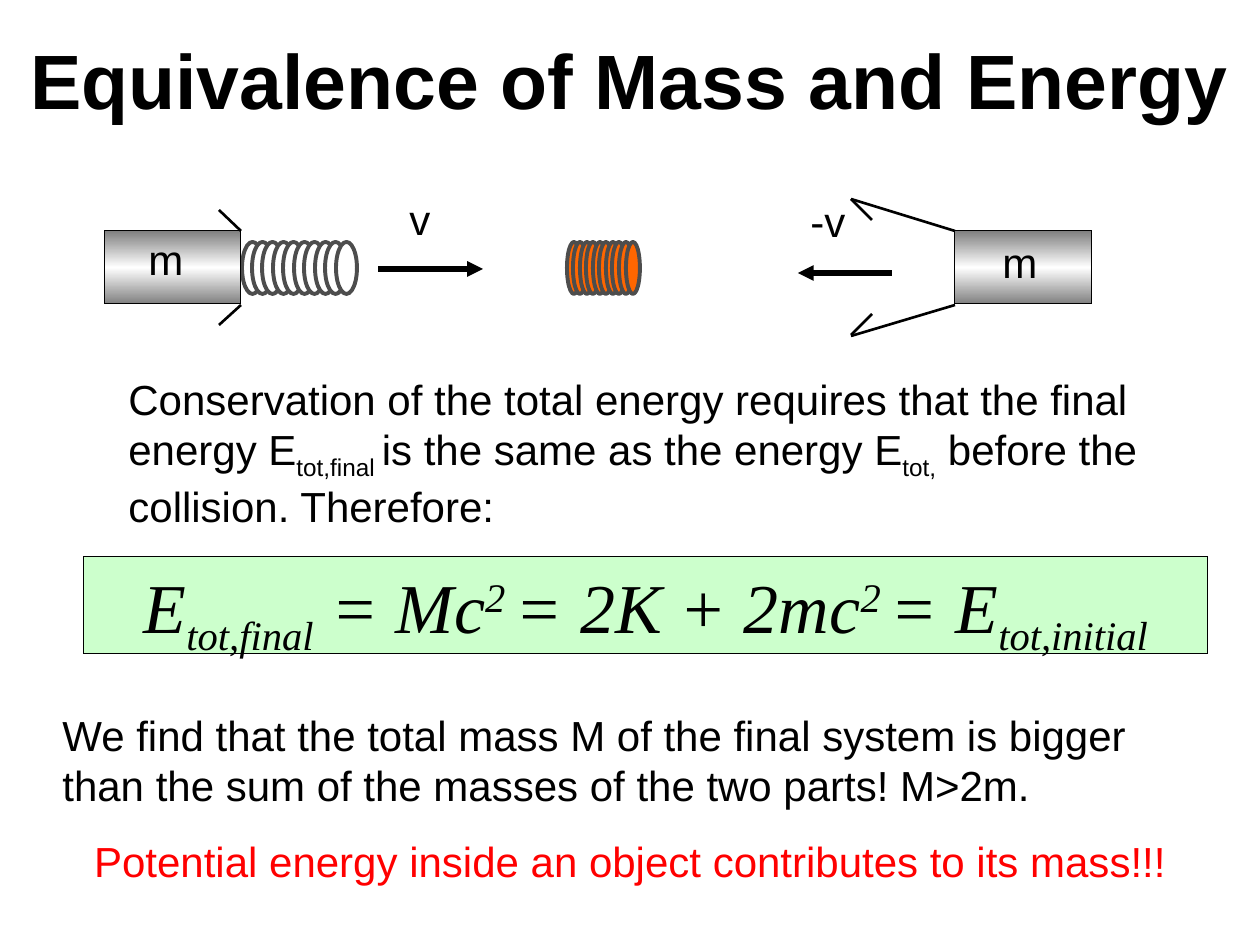
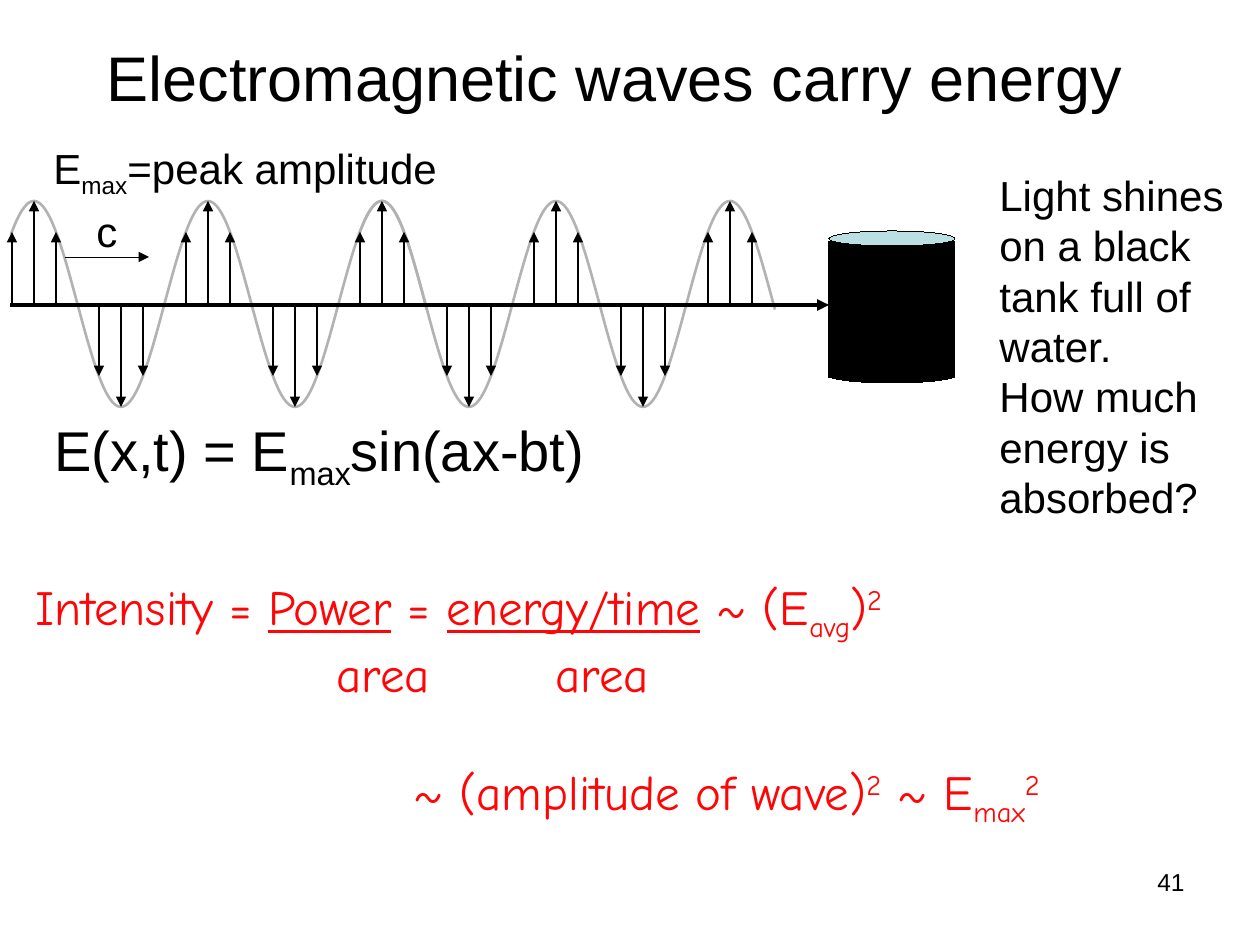
from copy import deepcopy
from math import cos, pi, sin

from lxml.etree import SubElement
from pptx import Presentation
from pptx.dml.color import RGBColor
from pptx.enum.shapes import MSO_CONNECTOR, MSO_SHAPE
from pptx.enum.text import MSO_ANCHOR, MSO_AUTO_SIZE, PP_ALIGN
from pptx.oxml.ns import qn
from pptx.util import Emu, Pt

SCALE = 914400 / 126  # EMU per px
BLACK = RGBColor(0x00, 0x00, 0x00)
WHITE = RGBColor(0xFF, 0xFF, 0xFF)
STEEL = RGBColor(0x80, 0x80, 0x80)
COIL_GRAY = RGBColor(0x4D, 0x4D, 0x4D)
HOT = RGBColor(0xFF, 0x66, 0x00)
PALE_GREEN = RGBColor(0xCC, 0xFF, 0xCC)
WAVE_GRAY = RGBColor(0xB2, 0xB2, 0xB2)
WATER = RGBColor(0xBB, 0xE0, 0xE3)
RED = RGBColor(0xFF, 0x00, 0x00)
INK_RED = RGBColor(0xFF, 0x05, 0x05)
SANS, SERIF, HAND = "Arial", "Times New Roman", "Comic Neue"
SUB, SUP, UNDERLINE = "sub", "sup", "underline"
BASELINE = {SUB: "-25000", SUP: "30000"}

# Mass and energy: a paragraph is a list of runs, a run is text or (text, style)
MASS_TITLE = "Equivalence of Mass and Energy"
CONSERVATION = [["Conservation of the total energy requires that the final energy E",
                 ("tot,final ", SUB), "is the same as the energy E", ("tot,", SUB),
                 " before the collision. Therefore:"]]
EQUATION = [["E", ("tot,final", SUB), " = Mc", ("2 ", SUP), "= 2K + 2mc", ("2 ", SUP),
             "= E", ("tot,initial", SUB)]]
FINDING = [["We find that the total mass M of the final system is bigger than "
            "the sum of the masses of the two parts! M>2m."]]
CONCLUSION = [["Potential energy inside an object contributes to its mass!!!"]]
LEFT_PART = {
    "block": (105, 231, 136, 73), "label": (136, 227, 67, 72),
    "hooks": [(219, 325, 241, 305), (219, 210, 241, 231)],
}
RIGHT_PART = {
    "block": (955, 231, 137, 73), "label": (990, 230, 67, 72),
    "hooks": [(955, 231, 851, 199), (851, 199, 872, 220),
              (955, 305, 851, 336), (851, 335, 872, 314)],
}
VELOCITIES = [("v", (397, 187, 50, 72), (378, 269, 483, 269)),
              ("-v", (798, 189, 67, 72), (892, 273, 798, 273))]
COILS = 10

# Waves
WAVE_TITLE = "Electromagnetic waves carry energy"
PEAK_LABEL = [["E", ("max", SUB), "=peak amplitude"]]
FIELD = [["E(x,t) = E", ("max", SUB), "sin(ax-bt)"]]
QUESTION = [["Light shines on a black tank full of water."], ["How much energy is absorbed?"]]
INTENSITY = [
    ["Intensity = ", ("Power", UNDERLINE), " = ", ("energy/time", UNDERLINE), " ~ (E",
     ("avg", SUB), ")", ("2", SUP)],
    ["\tarea\tarea"],
    ["\t~ (amplitude of wave)", ("2", SUP), " ~ E", ("max", SUB), ("2", SUP)],
]
INTENSITY_TABS = [[], [301, 520], [378]]
AXIS_Y, WAVE_MIDDLE, AMPLITUDE, PERIOD, FIRST_PEAK = 305, 304, 103, 174, 34
TRAIN_STARTS, TRAIN_LENGTH, TRAIN_PIECES = (11, 11 + 2 * PERIOD), 416, 20
EXTREMA, FIELD_GAP = 9, 22


def px(n):
    return Emu(round(n * SCALE))


def box_px(box):
    return [px(n) for n in box]


def drop_style(sp):
    """Remove the theme style, and with it the shadow and the default colours."""
    sp._element.remove(sp._element.find(qn("p:style")))


def add_runs(p, runs, size, font, color, bold=False, italic=False):
    for run in runs:
        text, style = run if isinstance(run, tuple) else (run, None)
        r = p.add_run()
        r.text = text
        f = r.font
        f.size, f.name, f.bold, f.italic = Pt(size), font, bold, italic
        f.color.rgb = color
        if style == UNDERLINE:
            f.underline = True
        elif style:
            f._element.set("baseline", BASELINE[style])


def fill_text(sp, paragraphs, size=24, font=SANS, color=BLACK, align=PP_ALIGN.LEFT,
              wrap=True, italic=False):
    tf = sp.text_frame
    tf.word_wrap = wrap
    tf.vertical_anchor = MSO_ANCHOR.TOP
    for i, runs in enumerate(paragraphs):
        p = tf.add_paragraph() if i else tf.paragraphs[0]
        p.alignment = align
        add_runs(p, runs, size, font, color, italic=italic)


def add_text(s, box, paragraphs, **look):
    sp = s.shapes.add_textbox(*box_px(box))
    fill_text(sp, paragraphs, **look)
    return sp


def add_shape(s, kind, box, fill, line=BLACK, width=None):
    sp = s.shapes.add_shape(kind, *box_px(box))
    drop_style(sp)
    sp.fill.solid()
    sp.fill.fore_color.rgb = fill
    if line is None:
        sp.line.fill.background()
    else:
        sp.line.color.rgb = line
    if width:
        sp.line.width = Pt(width)
    return sp


def add_line(s, ends, width=1.5, arrow=False):
    c = s.shapes.add_connector(MSO_CONNECTOR.STRAIGHT, *box_px(ends))
    drop_style(c)
    c.line.color.rgb = BLACK
    if width:
        c.line.width = Pt(width)
    if arrow:
        SubElement(c.line._get_or_add_ln(), qn("a:tailEnd"), type="triangle")
    SubElement(c._element.spPr, qn("a:effectLst"))


def add_slide(prs, title, box, size, bold=False):
    s = prs.slides.add_slide(prs.slide_layouts[5])
    sp = s.shapes.title
    sp.left, sp.top, sp.width, sp.height = box_px(box)
    tf = sp.text_frame
    tf.auto_size = MSO_AUTO_SIZE.NONE
    tf.vertical_anchor = MSO_ANCHOR.MIDDLE
    p = tf.paragraphs[0]
    p.alignment = PP_ALIGN.CENTER
    add_runs(p, [title], size, SANS, BLACK, bold)
    return s


def add_part(s, part):
    """Metal block, bright across its middle, with its hooks and label."""
    sp = add_shape(s, MSO_SHAPE.RECTANGLE, part["block"], WHITE)
    sp.fill.gradient()
    sp.fill.gradient_angle = 90
    edge, middle = sp.fill.gradient_stops
    edge.color.rgb, edge.position = STEEL, 0
    middle.color.rgb, middle.position = WHITE, 0.5
    stops = sp._element.spPr.find(".//" + qn("a:gsLst"))
    last = deepcopy(stops[0])
    last.set("pos", "100000")
    stops.append(last)
    for ends in part["hooks"]:
        add_line(s, ends)
    add_text(s, part["label"], [["m"]], wrap=False)


def add_spring(s, left, length, coil_width, fill):
    for i in range(COILS):
        x = left + (length - coil_width) * i // (COILS - 1)
        add_shape(s, MSO_SHAPE.OVAL, (x, 242, coil_width, 52), fill, COIL_GRAY, 2.25)


def wave_y(x):
    return WAVE_MIDDLE - AMPLITUDE * cos(2 * pi * (x - FIRST_PEAK) / PERIOD)


def wave_slope(x):
    return AMPLITUDE * 2 * pi / PERIOD * sin(2 * pi * (x - FIRST_PEAK) / PERIOD)


def add_wave(s, start):
    """Outline through points of the wave, its pieces bent to the wave's slope."""
    step = TRAIN_LENGTH / TRAIN_PIECES
    xs = [start + i * step for i in range(TRAIN_PIECES + 1)]
    points = [(px(x), px(wave_y(x))) for x in xs]
    fb = s.shapes.build_freeform(*points[0])
    fb.add_line_segments(points[1:], close=False)
    sp = fb.convert_to_shape()
    drop_style(sp)
    sp.fill.background()
    sp.line.color.rgb = WAVE_GRAY
    sp.line.width = Pt(1.5)
    third = step / 3
    for piece, x0, x1 in zip(list(sp._element.iter(qn("a:lnTo"))), xs, xs[1:]):
        piece.tag = qn("a:cubicBezTo")
        controls = [(x0 + third, wave_y(x0) + third * wave_slope(x0)),
                    (x1 - third, wave_y(x1) - third * wave_slope(x1))]
        for i, (x, y) in enumerate(controls):
            pt = SubElement(piece, qn("a:pt"), x=str(px(x) - sp.left), y=str(px(y) - sp.top))
            piece.insert(i, pt)


def build_mass(prs):
    s = add_slide(prs, MASS_TITLE, (0, 0, 1260, 158), 44, bold=True)
    left, motion, hot, right = [s.shapes.add_group_shape() for _ in range(4)]
    add_spring(left, 242, 115, 21, WHITE)
    add_part(left, LEFT_PART)
    for label, box, ends in VELOCITIES:
        add_line(motion, ends, 3, arrow=True)
        add_text(motion, box, [[label]], wrap=False)
    add_spring(hot, 567, 73, 14, HOT)
    add_part(right, RIGHT_PART)
    sp = add_shape(s, MSO_SHAPE.RECTANGLE, (84, 557, 1124, 97), PALE_GREEN)
    fill_text(sp, EQUATION, size=40, font=SERIF, align=PP_ALIGN.CENTER, italic=True)
    add_text(s, (50, 703, 1178, 115), FINDING)
    add_text(s, (0, 829, 1260, 64), CONCLUSION, color=RED, align=PP_ALIGN.CENTER)
    sp = add_shape(s, MSO_SHAPE.RECTANGLE, (116, 367, 1039, 189), WHITE, None)
    fill_text(sp, CONSERVATION)


def build_waves(prs):
    s = add_slide(prs, WAVE_TITLE, (32, 37, 1165, 78), 36)
    add_text(s, (903, 861, 294, 66), [["41"]], size=14, align=PP_ALIGN.RIGHT)
    light = s.shapes.add_group_shape()
    for start in TRAIN_STARTS:
        add_wave(light, start)
    for i in range(EXTREMA):
        for side in (-1, 0, 1):
            x = FIRST_PEAK + i * PERIOD // 2 + side * FIELD_GAP
            add_line(light, (x, AXIS_Y, x, round(wave_y(x))), arrow=True)
    add_line(light, (10, AXIS_Y, 829, AXIS_Y), 2.25, arrow=True)
    add_text(s, (41, 136, 416, 63), PEAK_LABEL, wrap=False)
    add_text(s, (42, 409, 563, 79), FIELD, size=32, wrap=False)
    add_line(s, (65, 257, 149, 257), None, arrow=True)
    add_text(s, (84, 199, 47, 63), [["c"]], wrap=False)

    sp = add_text(s, (23, 570, 1094, 251), INTENSITY, size=28, font=HAND, color=INK_RED)
    for p, tabs in zip(sp.text_frame.paragraphs, INTENSITY_TABS):
        if tabs:
            tab_list = SubElement(p._p.get_or_add_pPr(), qn("a:tabLst"))
            for pos in tabs:
                SubElement(tab_list, qn("a:tab"), pos=str(px(pos)), algn="l")
    p.space_before = Pt(34)

    add_shape(s, MSO_SHAPE.RECTANGLE, (829, 242, 126, 136), BLACK)
    add_shape(s, MSO_SHAPE.OVAL, (829, 231, 126, 15), WATER)
    add_text(s, (987, 163, 273, 369), QUESTION)
    add_shape(s, MSO_SHAPE.OVAL, (829, 368, 126, 15), BLACK)


def main():
    prs = Presentation()
    prs.slide_width, prs.slide_height = px(1260), px(945)
    build_mass(prs)
    build_waves(prs)
    prs.save("out.pptx")


if __name__ == "__main__":
    main()
